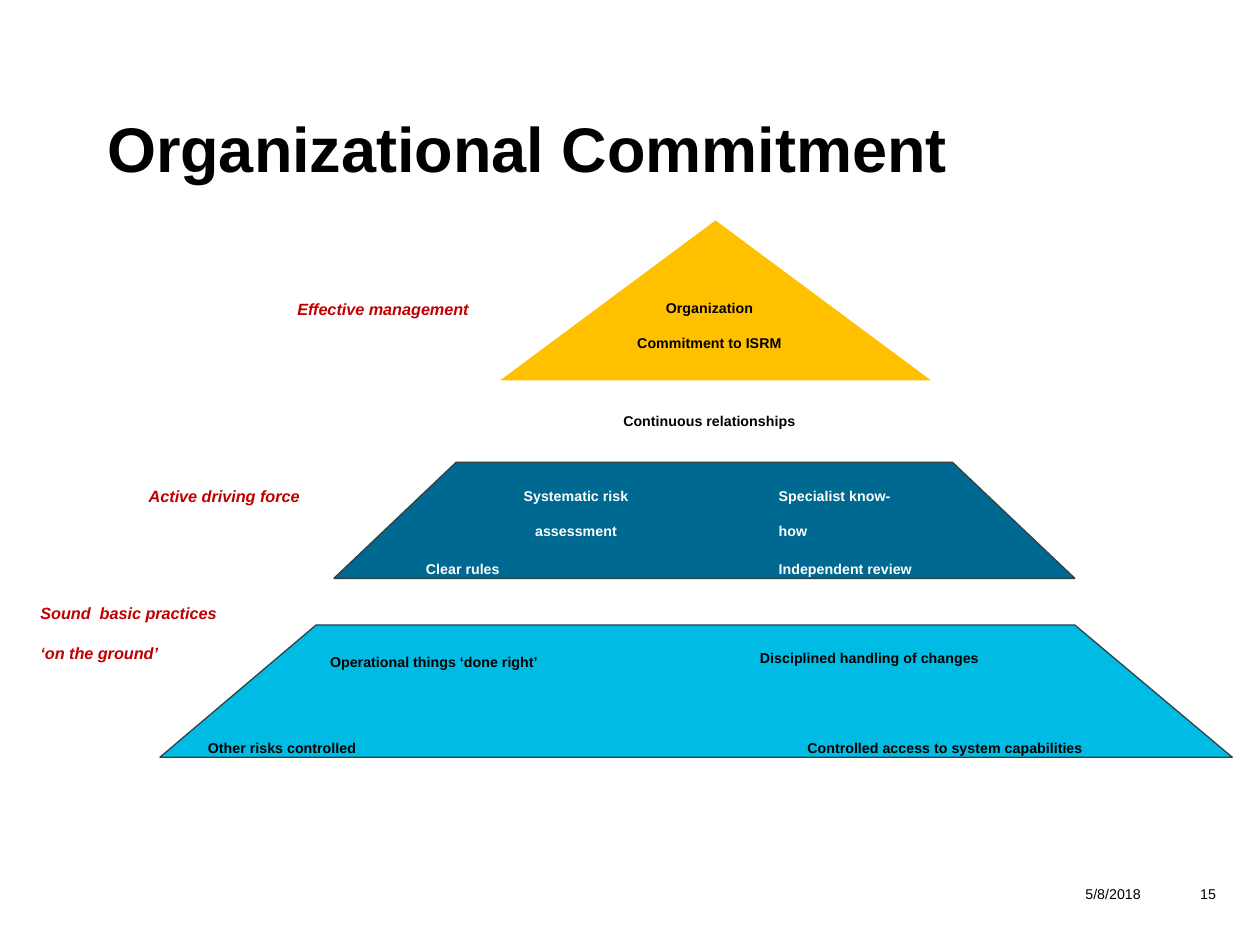
from pptx import Presentation
from pptx.dml.color import RGBColor
from pptx.enum.shapes import MSO_SHAPE as Shape
from pptx.enum.text import MSO_ANCHOR as Anchor, MSO_AUTO_SIZE as AutoSize, PP_ALIGN as Align
from pptx.util import Pt

BLACK = RGBColor(0x00, 0x00, 0x00)
WHITE = RGBColor(0xFF, 0xFF, 0xFF)
RED = RGBColor(0xC0, 0x00, 0x00)
GOLD = RGBColor(0xFF, 0xC0, 0x00)
NAVY = RGBColor(0x00, 0x69, 0x91)
CYAN = RGBColor(0x00, 0xBB, 0xE3)
OUTLINE = RGBColor(0x30, 0x40, 0x47)
FONT = "Arial"
SUBSCRIPT = "-33000"

TITLE = ("Organizational Commitment", (54, 30.2, 612, 108))
PEAK = (285.8, 126, 246.2, 91.4)
TIERS = [
    (CYAN, [(91.4, 432.7), (180.7, 357.1), (614.2, 357.1), (704.2, 432.7)]),
    (NAVY, [(190.8, 330.5), (260.6, 264.2), (544.3, 264.2), (614.2, 330.5)]),
]
CAPTIONS = [
    ("Effective management", (167, 156.2, 164.9, 44.6)),
    ("Active driving force", (82.1, 262.8, 176.4, 25.2)),
    ("Sound  basic practices\v‘on the ground’", (20.2, 329.8, 152.6, 63.4)),
]
LABELS = [
    ("Organization Commitment to ISRM", (352.1, 157, 106.6, 58.3), BLACK, Align.CENTER, True),
    ("Continuous relationships", (317.5, 221.8, 175.7, 24.5), BLACK, Align.CENTER, False),
    ("Systematic risk assessment", (272.2, 264.2, 113.8, 41), WHITE, Align.CENTER, True),
    ("Specialist know-how", (442.1, 264.2, 82.1, 41), WHITE, Align.LEFT, True),
    ("Clear rules", (240.5, 306, 90, 24.5), WHITE, Align.LEFT, True),
    ("Independent review", (442.1, 306, 136.8, 24.5), WHITE, Align.LEFT, False),
    ("Operational things ‘done right’", (166.3, 359.3, 163.4, 41), BLACK, Align.CENTER, True),
    ("Disciplined handling of changes", (385.9, 357.1, 221.8, 24.5), BLACK, Align.CENTER, True),
    ("Other risks controlled", (115.9, 408.2, 254.9, 24.5), BLACK, Align.LEFT, True),
    ("Controlled access to system capabilities", (398.9, 408.2, 282.2, 24.5), BLACK, Align.CENTER, True),
]
FOOTERS = [
    ("5/8/2018", (570.2, 491.8, 131.8, 36), Align.CENTER),
    ("15", (666, 491.8, 36, 36), Align.RIGHT),
]


def write(box, text, *, size=14, color=BLACK, bold=True, italic=False,
          align=Align.LEFT, wrap=True, inset=None, lowered=True):
    frame = box.text_frame
    frame.word_wrap = wrap
    if inset:
        frame.auto_size = AutoSize.SHAPE_TO_FIT_TEXT
        frame.margin_left = frame.margin_right = Pt(2.9)
        frame.margin_top = frame.margin_bottom = Pt(inset)
    frame.text = text
    para = frame.paragraphs[0]
    para.alignment = align
    for span in para.runs:
        font = span.font
        font.name, font.size = FONT, Pt(size)
        font.bold, font.italic = bold, italic
        font.color.rgb = color
        if lowered:
            span._r.get_or_add_rPr().set("baseline", SUBSCRIPT)


def points(values):
    return [Pt(value) for value in values]


def add_text(page, text, place, **style):
    write(page.shapes.add_textbox(*points(place)), text, **style)


def paint(shape, fill, line=None):
    shape.shadow.inherit = False
    shape.fill.solid()
    shape.fill.fore_color.rgb = fill
    if line is None:
        shape.line.fill.background()
    else:
        shape.line.color.rgb = line
        shape.line.width = Pt(0.75)


def add_tier(page, fill, corners):
    start, *rest = [points(corner) for corner in corners]
    builder = page.shapes.build_freeform(*start)
    builder.add_line_segments(rest, close=True)
    paint(builder.convert_to_shape(), fill, OUTLINE)


def main():
    deck = Presentation()
    deck.slide_width, deck.slide_height = Pt(720), Pt(540)
    page = deck.slides.add_slide(deck.slide_layouts[5])

    title = page.shapes.title
    text, place = TITLE
    title.left, title.top, title.width, title.height = points(place)
    write(title, text, size=36, lowered=False)
    title.text_frame.vertical_anchor = Anchor.MIDDLE

    paint(page.shapes.add_shape(Shape.ISOSCELES_TRIANGLE, *points(PEAK)), GOLD)
    for fill, corners in TIERS:
        add_tier(page, fill, corners)
    for text, place in CAPTIONS:
        add_text(page, text, place, size=16, color=RED, italic=True, inset=2.9)
    for text, place, color, align, wrap in LABELS:
        add_text(page, text, place, color=color, align=align, wrap=wrap, inset=3.6)
    for text, place, align in FOOTERS:
        add_text(page, text, place, bold=False, align=align)

    deck.save("out.pptx")


if __name__ == "__main__":
    main()
